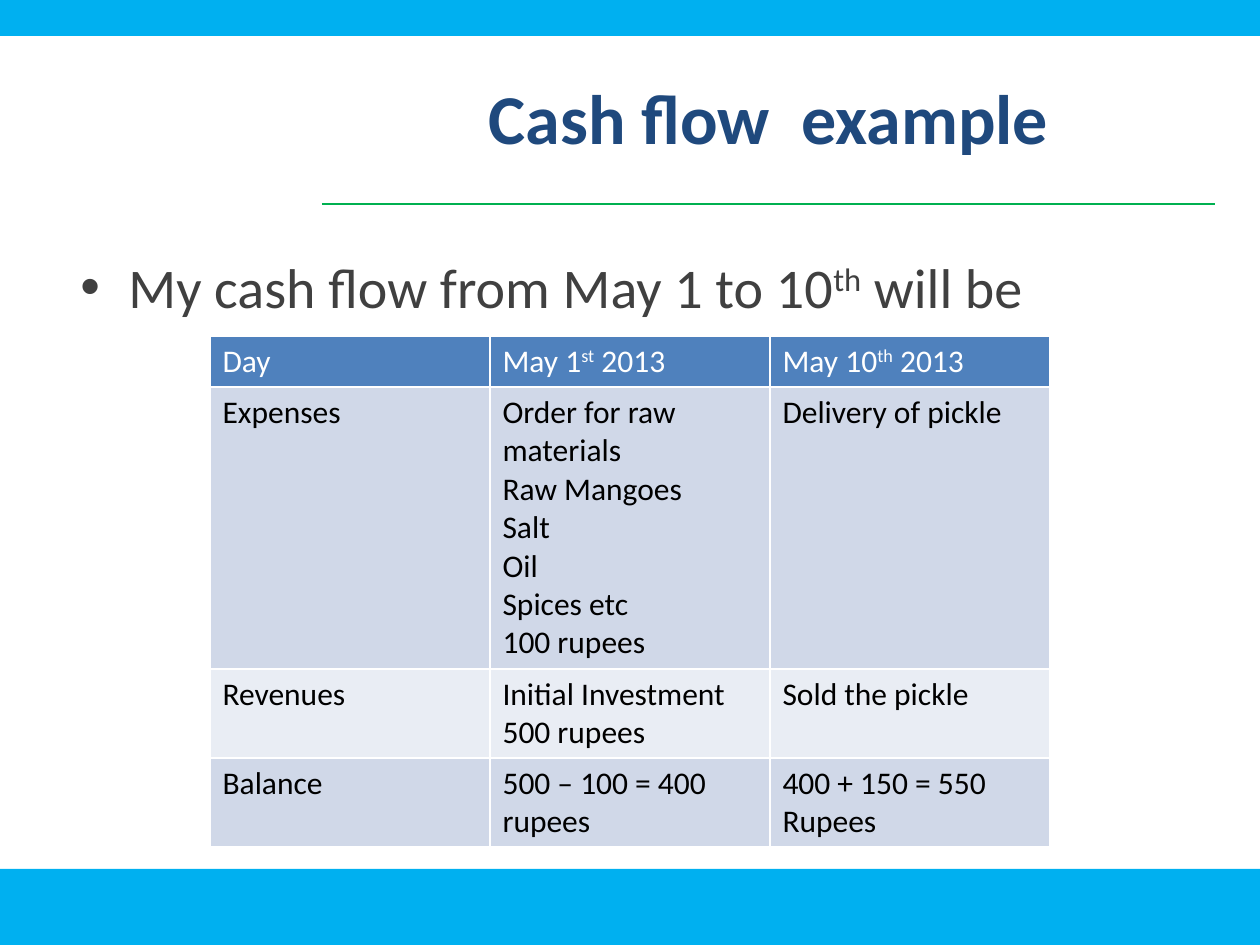
from dataclasses import dataclass

from lxml.etree import SubElement
from pptx import Presentation
from pptx.dml.color import RGBColor
from pptx.enum.shapes import MSO_CONNECTOR, MSO_SHAPE
from pptx.enum.text import MSO_ANCHOR, PP_ALIGN
from pptx.oxml.ns import qn
from pptx.util import Emu, Pt

EMU_PER_PX = 914400 / 126


@dataclass(frozen=True)
class Theme:
    font: str = "Calibri"
    band: str = "00B0F0"
    rule: str = "00B050"
    title: str = "1F497D"
    body: str = "404040"
    header_fill: str = "4F81BD"
    row_fills: tuple[str, str] = ("D0D8E8", "E9EDF4")
    white: str = "FFFFFF"
    black: str = "000000"
    title_size: int = 40
    body_size: int = 32
    table_size: int = 18


@dataclass(frozen=True)
class Box:
    left: int
    top: int
    width: int
    height: int

    def emu(self) -> tuple[Emu, Emu, Emu, Emu]:
        return px(self.left), px(self.top), px(self.width), px(self.height)


@dataclass(frozen=True)
class TableRow:
    height: int
    cells: tuple[str, str, str]


THEME = Theme()
BANDS = (Box(0, 869, 1260, 76), Box(0, 0, 1260, 36))
TITLE_BOX = Box(322, 38, 893, 157)
BODY_BOX = Box(68, 246, 1111, 330)
TABLE_BOX = Box(210, 336, 840, 511)
BULLET_INDENT = 48

# Text between carets is superscript; a line break starts a new paragraph
ROWS = (
    TableRow(51, ("Day", "May 1^st^ 2013", "May 10^th^ 2013")),
    TableRow(282, (
        "Expenses",
        "Order for raw materials\nRaw Mangoes\nSalt\nOil\nSpices etc\n100 rupees",
        "Delivery of pickle",
    )),
    TableRow(89, ("Revenues", "Initial Investment\n500 rupees", "Sold the pickle")),
    TableRow(89, ("Balance", "500 – 100 = 400 rupees", "400 + 150 = 550 Rupees")),
)


def px(value: int) -> Emu:
    return Emu(round(value * EMU_PER_PX))


def rgb(color: str) -> RGBColor:
    return RGBColor.from_string(color)


def write_text(text_frame, text: str, *, size: int, color: str, bold: bool = False,
               align=PP_ALIGN.LEFT, anchor=MSO_ANCHOR.TOP, bullet: str = "") -> None:
    text_frame.word_wrap = True
    text_frame.vertical_anchor = anchor
    for index, line in enumerate(text.split("\n")):
        paragraph = text_frame.add_paragraph() if index else text_frame.paragraphs[0]
        paragraph.alignment = align
        if bullet:
            properties = paragraph._p.get_or_add_pPr()
            properties.set("marL", str(px(BULLET_INDENT)))
            properties.set("indent", str(-px(BULLET_INDENT)))
            SubElement(properties, qn("a:buFont"), typeface="Arial")
            SubElement(properties, qn("a:buChar"), char=bullet)
        for part_number, part in enumerate(line.split("^")):
            run = paragraph.add_run()
            run.text = part
            run.font.name = THEME.font
            run.font.size = Pt(size)
            run.font.bold = bold
            run.font.color.rgb = rgb(color)
            if part_number % 2:
                run._r.get_or_add_rPr().set("baseline", "30000")


def add_band(slide, box: Box) -> None:
    shape = slide.shapes.add_shape(MSO_SHAPE.RECTANGLE, *box.emu())
    shape.shadow.inherit = False
    shape.fill.solid()
    shape.fill.fore_color.rgb = rgb(THEME.band)
    shape.line.fill.background()


def add_rule(slide, left: int, right: int, y: int) -> None:
    connector = slide.shapes.add_connector(
        MSO_CONNECTOR.STRAIGHT, px(left), px(y), px(right), px(y))
    connector.line.color.rgb = rgb(THEME.rule)
    connector.line.width = Pt(0.75)
    SubElement(connector._element.spPr, qn("a:effectLst"))


def style_cell(cell, fill: str) -> None:
    properties = cell._tc.get_or_add_tcPr()
    for side in ("lnL", "lnR", "lnT", "lnB"):
        border = SubElement(properties, qn(f"a:{side}"), w=str(Pt(1)))
        SubElement(SubElement(border, qn("a:solidFill")), qn("a:srgbClr"), val=THEME.white)
    cell.fill.solid()
    cell.fill.fore_color.rgb = rgb(fill)


def add_cash_table(slide, box: Box, rows: tuple[TableRow, ...]) -> None:
    column_count = len(rows[0].cells)
    table = slide.shapes.add_table(len(rows), column_count, *box.emu()).table
    for column in table.columns:
        column.width = px(box.width // column_count)
    for row_number, row in enumerate(rows):
        table.rows[row_number].height = px(row.height)
        is_header = row_number == 0
        fill = THEME.header_fill if is_header else THEME.row_fills[(row_number - 1) % 2]
        for column_number, text in enumerate(row.cells):
            cell = table.cell(row_number, column_number)
            style_cell(cell, fill)
            write_text(cell.text_frame, text, size=THEME.table_size,
                       color=THEME.white if is_header else THEME.black)


def main() -> None:
    presentation = Presentation()
    presentation.slide_width, presentation.slide_height = px(1260), px(945)
    slide = presentation.slides.add_slide(presentation.slide_layouts[6])

    # Bands and the rule under the title
    for band in BANDS:
        add_band(slide, band)
    add_rule(slide, 322, 1215, 204)

    # Title and bullet
    title = slide.shapes.add_textbox(*TITLE_BOX.emu())
    write_text(title.text_frame, "Cash flow  example", size=THEME.title_size,
               color=THEME.title, bold=True, align=PP_ALIGN.CENTER,
               anchor=MSO_ANCHOR.MIDDLE)
    body = slide.shapes.add_textbox(*BODY_BOX.emu())
    write_text(body.text_frame, "My cash flow from May 1 to 10^th^ will be",
               size=THEME.body_size, color=THEME.body, bullet="•")

    # Cash flow table
    add_cash_table(slide, TABLE_BOX, ROWS)

    presentation.save("out.pptx")


if __name__ == "__main__":
    main()
